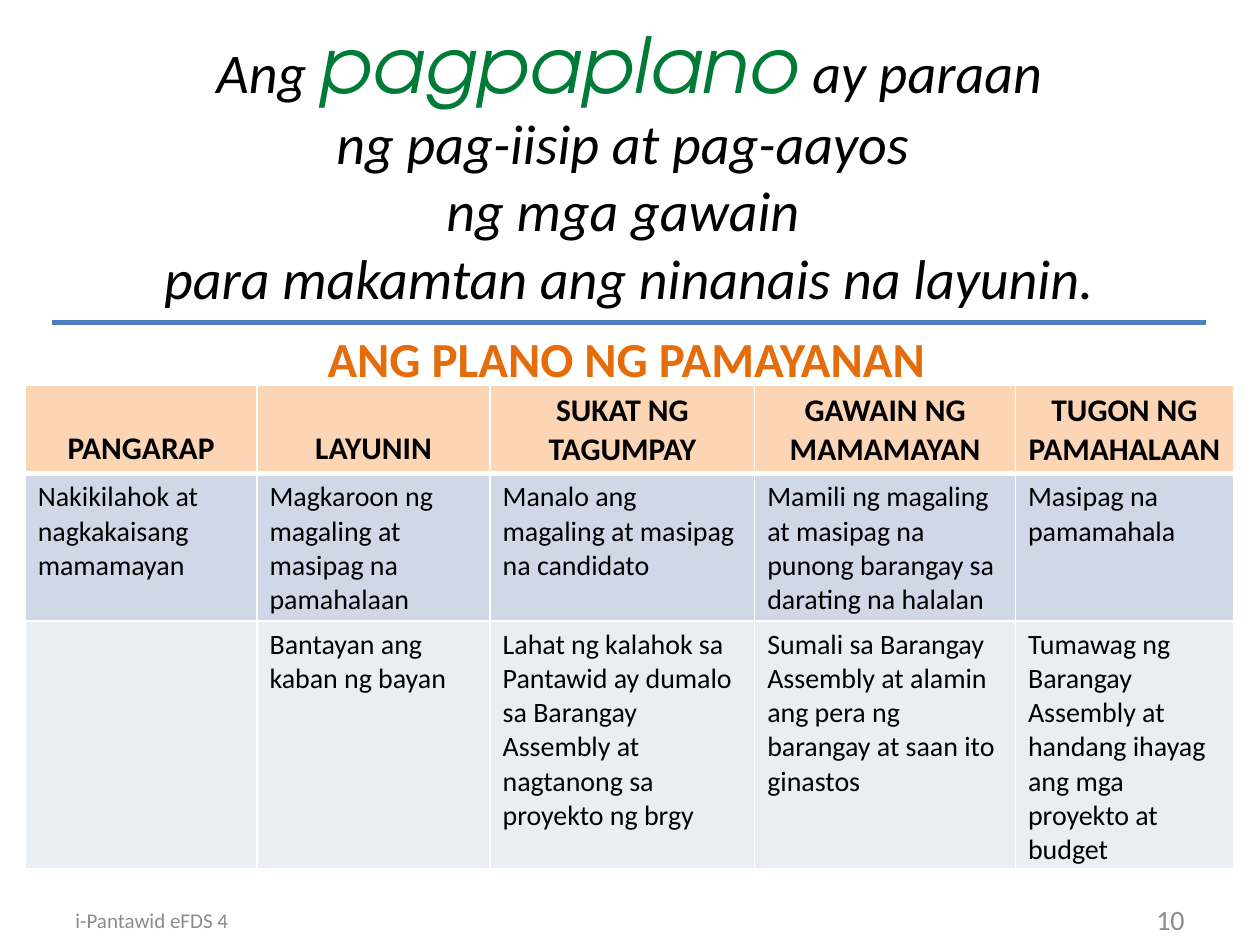
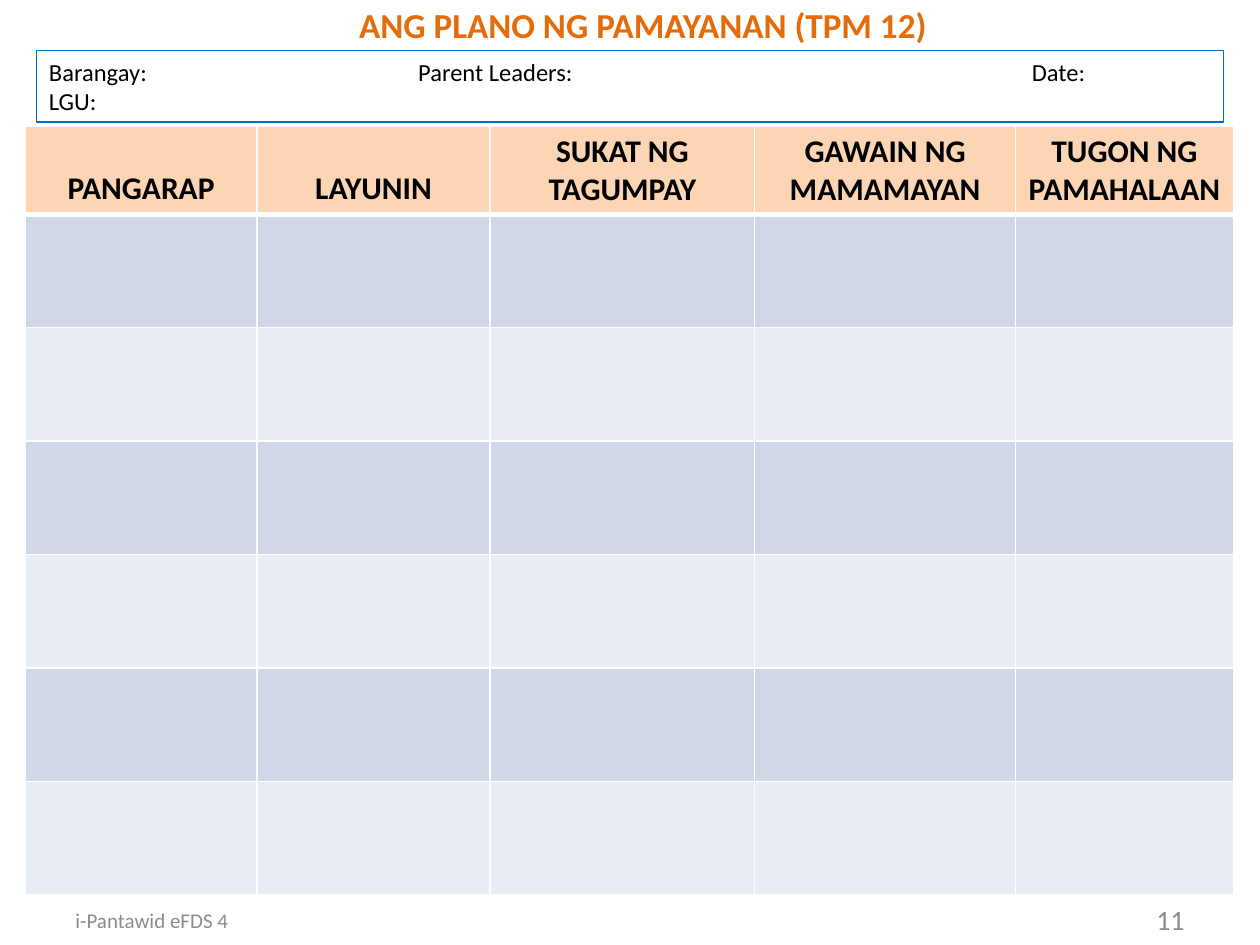
import pptx
import pptx.util
import pptx.dml.color
import pptx.enum.text
import pptx.enum.shapes
import lxml.etree
from dataclasses import dataclass

Inches = pptx.util.Inches
Align = pptx.enum.text.PP_ALIGN
Anchor = pptx.enum.text.MSO_ANCHOR


# Colours, fonts and type sizes
@dataclass(frozen=True)
class Theme:
    font: str = "Calibri"
    fancy: str = "TeX Gyre Adventor"
    ink: str = "000000"
    green: str = "007A37"
    orange: str = "E46C0A"
    rule: str = "4B7EBC"
    frame: str = "0070C0"
    gray: str = "8C8C8C"
    grid: str = "FFFFFF"
    head: str = "FCD5B5"
    bands: tuple = ("D0D8E8", "E9EDF4")
    quote: int = 32
    accent: int = 44
    header: int = 18
    body: int = 16
    form: int = 14
    foot: int = 12
    page: int = 16


THEME = Theme()
COLS = (1.84, 1.85, 2.1, 2.07, 1.73)
HEADS = ("PANGARAP", "LAYUNIN", "SUKAT NG TAGUMPAY",
         "GAWAIN NG MAMAMAYAN", "TUGON NG PAMAHALAAN")
HEAD_TALL = 0.69
PLAN = (
    ("Nakikilahok at nagkakaisang mamamayan",
     "Magkaroon ng magaling at masipag na pamahalaan",
     "Manalo ang magaling at masipag na candidato",
     "Mamili ng magaling at masipag na punong barangay sa darating na halalan",
     "Masipag na pamamahala"),
    ("",
     "Bantayan ang kaban ng bayan",
     "Lahat ng kalahok sa Pantawid ay dumalo sa Barangay Assembly "
     "at nagtanong sa proyekto ng brgy",
     "Sumali sa Barangay Assembly at alamin ang pera ng barangay "
     "at saan ito ginastos",
     "Tumawag ng Barangay Assembly at handang ihayag ang mga "
     "proyekto at budget"),
)


def rgb(color):
    return pptx.dml.color.RGBColor.from_string(color)


def style(font, size, color=THEME.ink, name=THEME.font, bold=False, slant=False):
    font.size = pptx.util.Pt(size)
    font.color.rgb = rgb(color)
    font.name = name
    font.bold = bold
    font.italic = slant


def add_text(slide, box, text, size, color, align=Align.LEFT):
    """Add a one-line text box, centred in height."""
    frame = slide.shapes.add_textbox(*map(Inches, box)).text_frame
    frame.word_wrap = True
    frame.vertical_anchor = Anchor.MIDDLE
    para = frame.paragraphs[0]
    para.text = text
    para.alignment = align
    style(para.font, size, color)


def add_slide(deck, page):
    """Add a title-only slide with its footer."""
    slide = deck.slides.add_slide(deck.slide_layouts[5])
    add_text(slide, (0.5, 7.1, 2.33, 0.4), "i-Pantawid eFDS 4",
             THEME.foot, THEME.gray)
    add_text(slide, (7.17, 7.1, 2.33, 0.4), str(page),
             THEME.page, THEME.gray, Align.RIGHT)
    return slide


def set_title(slide, box, text, size):
    title = slide.shapes.title
    title.left, title.top, title.width, title.height = map(Inches, box)
    frame = title.text_frame
    frame.text = text
    frame.auto_size = pptx.enum.text.MSO_AUTO_SIZE.NONE
    frame.word_wrap = False
    frame.vertical_anchor = Anchor.TOP
    para = frame.paragraphs[0]
    para.alignment = Align.LEFT
    style(para.font, size, THEME.orange, bold=True)


def add_node(parent, tag, **attrs):
    return lxml.etree.SubElement(parent, pptx.oxml.ns.qn(tag), attrs)


def set_edges(cell, top, bottom):
    """Draw the cell borders; widths are in points."""
    props = cell._tc.get_or_add_tcPr()
    for tag, width in (("a:lnL", 1), ("a:lnR", 1),
                       ("a:lnT", top), ("a:lnB", bottom)):
        line = add_node(props, tag, w=str(pptx.util.Pt(width)))
        add_node(add_node(line, "a:solidFill"), "a:srgbClr", val=THEME.grid)


def add_plan(slide, top, rows, talls):
    """Add the plan table: the shared header row above banded rows."""
    talls = (HEAD_TALL, *talls)
    table = slide.shapes.add_table(
        len(talls), len(COLS), Inches(0.2), Inches(top),
        Inches(sum(COLS)), Inches(sum(talls))).table
    table.first_row = table.horz_banding = False
    for col, width in zip(table.columns, COLS):
        col.width = Inches(width)
    for row, tall in zip(table.rows, talls):
        row.height = Inches(tall)
    for r, texts in enumerate((HEADS, *rows)):
        is_head = r == 0
        for c, text in enumerate(texts):
            cell = table.cell(r, c)
            set_edges(cell, 3 if r == 1 else 1, 3 if is_head else 1)
            cell.fill.solid()
            cell.fill.fore_color.rgb = rgb(
                THEME.head if is_head else THEME.bands[(r - 1) % 2])
            cell.vertical_anchor = Anchor.BOTTOM if is_head else Anchor.TOP
            para = cell.text_frame.paragraphs[0]
            para.text = text
            para.alignment = Align.CENTER if is_head else Align.LEFT
            style(para.font, THEME.header if is_head else THEME.body,
                  bold=is_head)


def add_quote(slide):
    """Add the definition, with its key word set apart."""
    box = map(Inches, (0.41, 0.08, 9.17, 2.46))
    frame = slide.shapes.add_textbox(*box).text_frame
    frame.word_wrap = True
    first = frame.paragraphs[0]
    first.alignment = Align.CENTER
    for text, look in (
            ("Ang ", (THEME.quote,)),
            ("pagpaplano", (THEME.accent, THEME.green, THEME.fancy)),
            (" ay paraan", (THEME.quote,))):
        run = first.add_run()
        run.text = text
        style(run.font, *look, slant=True)
    for text in ("ng pag-iisip at pag-aayos ", "ng mga gawain ",
                 "para makamtan ang ninanais na layunin."):
        para = frame.add_paragraph()
        para.text = text
        para.alignment = Align.CENTER
        style(para.font, THEME.quote, slant=True)


def add_rule(slide, left, right, top):
    line = slide.shapes.add_connector(
        pptx.enum.shapes.MSO_CONNECTOR.STRAIGHT,
        Inches(left), Inches(top), Inches(right), Inches(top))
    line.line.color.rgb = rgb(THEME.rule)
    line.line.width = pptx.util.Pt(3)
    add_node(line._element.spPr, "a:effectLst")


def add_form(slide, box, lines, stops):
    """Add the framed form fields, spaced by tab stops."""
    shape = slide.shapes.add_shape(
        pptx.enum.shapes.MSO_SHAPE.RECTANGLE, *map(Inches, box))
    shape.shadow.inherit = False
    shape.fill.background()
    shape.line.color.rgb = rgb(THEME.frame)
    shape.line.width = pptx.util.Pt(0.75)
    frame = shape.text_frame
    frame.word_wrap = True
    frame.vertical_anchor = Anchor.TOP
    frame.text = "\n".join(lines)
    for para in frame.paragraphs:
        para.alignment = Align.LEFT
        props = para._p.get_or_add_pPr()
        tabs = add_node(props, "a:tabLst")
        for stop in stops:
            add_node(tabs, "a:tab", pos=str(Inches(stop)), algn="l")
        style(para.font, THEME.form)


def main():
    deck = pptx.Presentation()
    deck.slide_width, deck.slide_height = Inches(10), Inches(7.5)

    # Definition and sample plan
    slide = add_slide(deck, 10)
    add_quote(slide)
    add_rule(slide, 0.41, 9.57, 2.56)
    set_title(slide, (2.5, 2.56, 5, 0.57), "ANG PLANO NG PAMAYANAN", 28)
    add_plan(slide, 3.06, PLAN, (1.17, 1.96))

    # Blank plan form
    slide = add_slide(deck, 11)
    set_title(slide, (2.75, -0.02, 4.74, 0.44),
              "ANG PLANO NG PAMAYANAN (TPM 12)", 20)
    add_form(slide, (0.29, 0.4, 9.42, 0.57),
             ("Barangay:\tParent Leaders:\tDate:", "LGU:"), (2.93, 7.8))
    blanks = 6
    add_plan(slide, 1, [[""] * len(COLS)] * blanks, [0.9] * blanks)

    deck.save("out.pptx")


if __name__ == "__main__":
    main()
